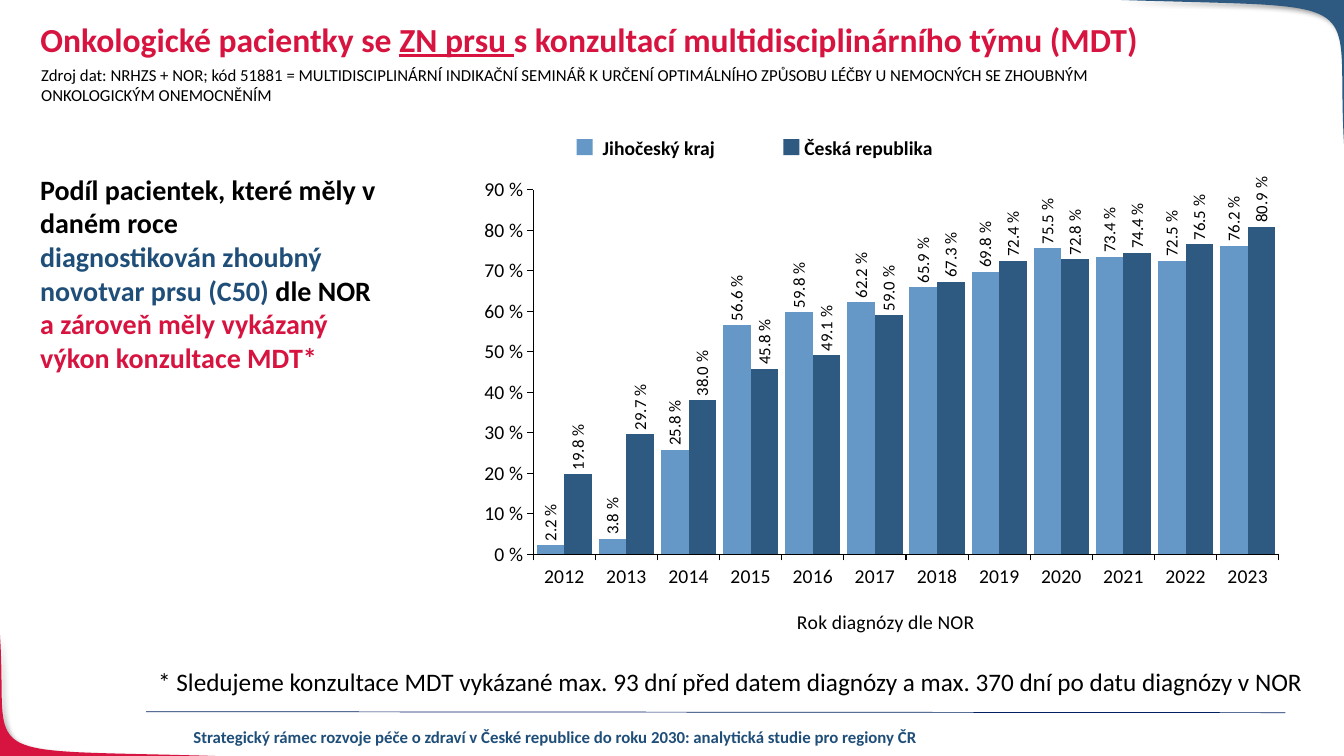
import collections
import pptx
import pptx.chart.data
import pptx.dml.color
import pptx.enum.chart
import pptx.enum.shapes
import pptx.enum.text
import pptx.oxml
import pptx.oxml.ns
import pptx.util

FONT = "Calibri"
COLORS = {
    "red": "D71440",
    "navy": "2E5980",
    "sky": "6598C7",
    "heading": "1F4E79",
    "rule": "002060",
    "black": "000000",
}
WIDTH, HEIGHT = pptx.util.Inches(13.33), pptx.util.Inches(7.5)
COLUMN, ROW = WIDTH / 100, HEIGHT / 100

YEARS = [str(year) for year in range(2012, 2024)]
REGIONS = [
    ("Jihočeský kraj", "sky",
     [0.022, 0.038, 0.258, 0.566, 0.598, 0.622, 0.659, 0.698, 0.755, 0.734, 0.725, 0.762]),
    ("Česká republika", "navy",
     [0.198, 0.297, 0.38, 0.458, 0.491, 0.59, 0.673, 0.724, 0.728, 0.744, 0.765, 0.809]),
]

Box = collections.namedtuple("Box", "left top width height")


def cells(left, top, width, height):
    return Box(round(left * COLUMN), round(top * ROW), round(width * COLUMN), round(height * ROW))


def rgb(name):
    return pptx.dml.color.RGBColor.from_string(COLORS[name])


def xml(tag, **attributes):
    element = pptx.oxml.parse_xml(f"<{tag} {pptx.oxml.ns.nsdecls(tag.split(':')[0])}/>")
    for name, value in attributes.items():
        element.set(name, str(value))
    return element


def style(font, size, color="black", bold=False):
    font.name, font.size, font.bold = FONT, pptx.util.Pt(size), bold
    font.color.rgb = rgb(color)


def add_run(paragraph, text, size, color="black", bold=False):
    run = paragraph.add_run()
    run.text = text
    style(run.font, size, color, bold)
    return run


def add_text(slide, box):
    frame = slide.shapes.add_textbox(*box).text_frame
    frame.word_wrap = True
    frame.auto_size = pptx.enum.text.MSO_AUTO_SIZE.SHAPE_TO_FIT_TEXT
    return frame


def add_corner(slide, box, curve, corner, color):
    def spot(x, y):
        return round(box.left + x * box.width), round(box.top + y * box.height)

    def on_curve(t):
        weights = ((1 - t) ** 3, 3 * t * (1 - t) ** 2, 3 * t ** 2 * (1 - t), t ** 3)
        return spot(*(sum(w * p[axis] for w, p in zip(weights, curve)) for axis in (0, 1)))

    outline = slide.shapes.build_freeform(*on_curve(0))
    outline.add_line_segments([on_curve(step / 40) for step in range(1, 41)] + [spot(*corner)])
    wedge = outline.convert_to_shape()
    wedge.fill.solid()
    wedge.fill.fore_color.rgb = rgb(color)
    wedge.line.fill.background()
    wedge.shadow.inherit = False
    shadow = xml("a:outerShdw", blurRad=pptx.util.Pt(4), dist=pptx.util.Pt(3),
                 dir=45 * 60000, algn="tl", rotWithShape=0)
    tint = xml("a:srgbClr", val=COLORS["black"])
    tint.append(xml("a:alpha", val=40000))
    shadow.append(tint)
    wedge._element.spPr.find(pptx.oxml.ns.qn("a:effectLst")).append(shadow)


def add_footer(slide, box):
    rule = slide.shapes.add_connector(
        pptx.enum.shapes.MSO_CONNECTOR.STRAIGHT,
        round(box.left + 3.3 * COLUMN), round(box.top - 1.33 * ROW),
        round(box.left + 88.05 * COLUMN), round(box.top - 1.2 * ROW))
    rule.line.color.rgb = rgb("rule")
    rule.line.width = pptx.util.Pt(0.5)
    rule._element.spPr.append(xml("a:effectLst"))
    study = add_text(slide, box).paragraphs[0]
    study.alignment = pptx.enum.text.PP_ALIGN.CENTER
    add_run(study, "Strategický rámec rozvoje péče o zdraví v České republice do roku 2030: "
                   "analytická studie pro regiony ČR", 12, "heading", True)


def add_title(slide, box):
    title = slide.shapes.title
    title.left, title.top, title.width, title.height = box
    frame = title.text_frame
    frame.vertical_anchor = pptx.enum.text.MSO_ANCHOR.TOP
    frame.auto_size = pptx.enum.text.MSO_AUTO_SIZE.NONE
    heading = frame.paragraphs[0]
    heading.alignment = pptx.enum.text.PP_ALIGN.LEFT
    heading.line_spacing = 0.9
    for text, underlined in (("Onkologické pacientky se ", False), ("ZN prsu ", True),
                             ("s konzultací multidisciplinárního týmu (MDT)", False)):
        add_run(heading, text, 24, "red", True).font.underline = underlined


def add_note(slide, box, text, size):
    add_run(add_text(slide, box).paragraphs[0], text, size)


def add_description(slide, box):
    share = add_text(slide, box).paragraphs[0]
    add_run(share, "Podíl pacientek, které měly v\u00a0daném roce ".replace("\u00a0", " "), 20, bold=True)
    share.add_line_break()
    add_run(share, "diagnostikován zhoubný novotvar prsu (C50) ", 20, "heading", True)
    add_run(share, "dle NOR ", 20, bold=True)
    share.add_line_break()
    add_run(share, "a zároveň měly vykázaný výkon konzultace MDT*", 20, "red", True)


def place(parent, index, **measures):
    tag = pptx.oxml.ns.qn("c:layout")
    for previous in parent.findall(tag):
        parent.remove(previous)
    layout, manual = xml("c:layout"), xml("c:manualLayout")
    for name, value in measures.items():
        manual.append(xml(f"c:{name}", val=value))
    layout.append(manual)
    parent.insert(index, layout)


def add_rate_chart(slide, box):
    rates = pptx.chart.data.CategoryChartData(number_format="0.0\\ %")
    rates.categories = YEARS
    for region, _, values in REGIONS:
        rates.add_series(region, values)
    chart = slide.shapes.add_chart(
        pptx.enum.chart.XL_CHART_TYPE.COLUMN_CLUSTERED, *box, rates).chart
    chart.has_title = chart.has_legend = False
    style(chart.font, 14)

    for axis in (chart.category_axis, chart.value_axis):
        axis.has_major_gridlines = False
        axis.major_tick_mark = pptx.enum.chart.XL_TICK_MARK.OUTSIDE
        axis.format.line.color.rgb = rgb("black")
        axis.format.line.width = pptx.util.Pt(0.75)
        style(axis.tick_labels.font, 14)
    chart.value_axis.minimum_scale = 0
    chart.value_axis.maximum_scale = 0.9
    chart.value_axis.major_unit = 0.1
    chart.value_axis.tick_labels.number_format = "0\\ %"
    chart.value_axis.tick_labels.number_format_is_linked = False
    axis_title = chart.category_axis.axis_title
    add_run(axis_title.text_frame.paragraphs[0], "Rok diagnózy dle NOR", 14)
    place(axis_title._element, 1, xMode="edge", yMode="edge", x=0.4, y=0.93)
    place(chart._chartSpace.chart.plotArea, 0, layoutTarget="inner", xMode="edge", yMode="edge",
          x=0.1, y=0.11, w=0.86, h=0.72)

    plot = chart.plots[0]
    plot.gap_width, plot.overlap, plot.vary_by_categories = 25, 0, False
    for series, (_, color, _) in zip(plot.series, REGIONS):
        series.format.fill.solid()
        series.format.fill.fore_color.rgb = rgb(color)
        labels = series.data_labels
        labels.show_value = True
        labels.position = pptx.enum.chart.XL_LABEL_POSITION.OUTSIDE_END
        labels.number_format, labels.number_format_is_linked = "0.0\\ %", False
        style(labels.font, 12)
        rotation = labels._element.find(".//" + pptx.oxml.ns.qn("a:bodyPr"))
        rotation.set("rot", str(-90 * 60000))
        rotation.set("vert", "horz")


def add_legend(slide, box):
    indent, step, side = round(1.95 * COLUMN), round(15 * COLUMN), round(1.2 * COLUMN)
    frame = add_text(slide, Box(box.left + indent, box.top, box.width - indent, box.height))
    frame.margin_left = frame.margin_top = frame.margin_right = frame.margin_bottom = 0
    frame.vertical_anchor = pptx.enum.text.MSO_ANCHOR.MIDDLE
    names = frame.paragraphs[0]
    stops = xml("a:tabLst")
    stops.append(xml("a:tab", pos=step, algn="l"))
    names._p.get_or_add_pPr().append(stops)
    add_run(names, "\t".join(region for region, _, _ in REGIONS), 14, bold=True)
    for index, (_, color, _) in enumerate(REGIONS):
        key = slide.shapes.add_shape(
            pptx.enum.shapes.MSO_SHAPE.RECTANGLE, box.left + round(index * 15.38 * COLUMN),
            box.top + (box.height - side) // 2, side, side)
        key.shadow.inherit = False
        key.fill.solid()
        key.fill.fore_color.rgb = rgb(color)
        key.line.fill.background()


def main():
    deck = pptx.Presentation()
    deck.slide_width, deck.slide_height = WIDTH, HEIGHT
    slide = deck.slides.add_slide(deck.slide_layouts.get_by_name("Title Only"))
    add_corner(slide, cells(0, 84, 16, 16), ((1, 1), (-0.16, 0.94), (0.04, 1.07), (0, 0)), (0, 1), "red")
    add_corner(slide, cells(83.35, 0, 16.65, 19), ((0, 0), (1.16, 0.06), (0.96, -0.06), (1, 1)), (1, 0), "navy")
    add_footer(slide, cells(7.58, 95.47, 67.5, 4))
    add_title(slide, cells(2.25, 2.4, 86.25, 7.87))
    add_note(slide, cells(2.33, 7.87, 85.35, 6.67),
             "Zdroj dat: NRHZS + NOR; kód 51881 = MULTIDISCIPLINÁRNÍ INDIKAČNÍ SEMINÁŘ K URČENÍ "
             "OPTIMÁLNÍHO ZPŮSOBU LÉČBY U NEMOCNÝCH SE ZHOUBNÝM ONKOLOGICKÝM ONEMOCNĚNÍM", 12)
    add_rate_chart(slide, cells(33.23, 17.73, 64.5, 67.07))
    add_description(slide, cells(2.25, 22.13, 27.45, 28.27))
    add_note(slide, cells(11.03, 87.47, 87.45, 5.33),
             "* Sledujeme konzultace MDT vykázané max. 93 dní před datem diagnózy "
             "a max. 370 dní po datu diagnózy v NOR", 18)
    add_legend(slide, cells(42.9, 17.87, 33.6, 3.2))
    deck.save("out.pptx")


if __name__ == "__main__":
    main()
